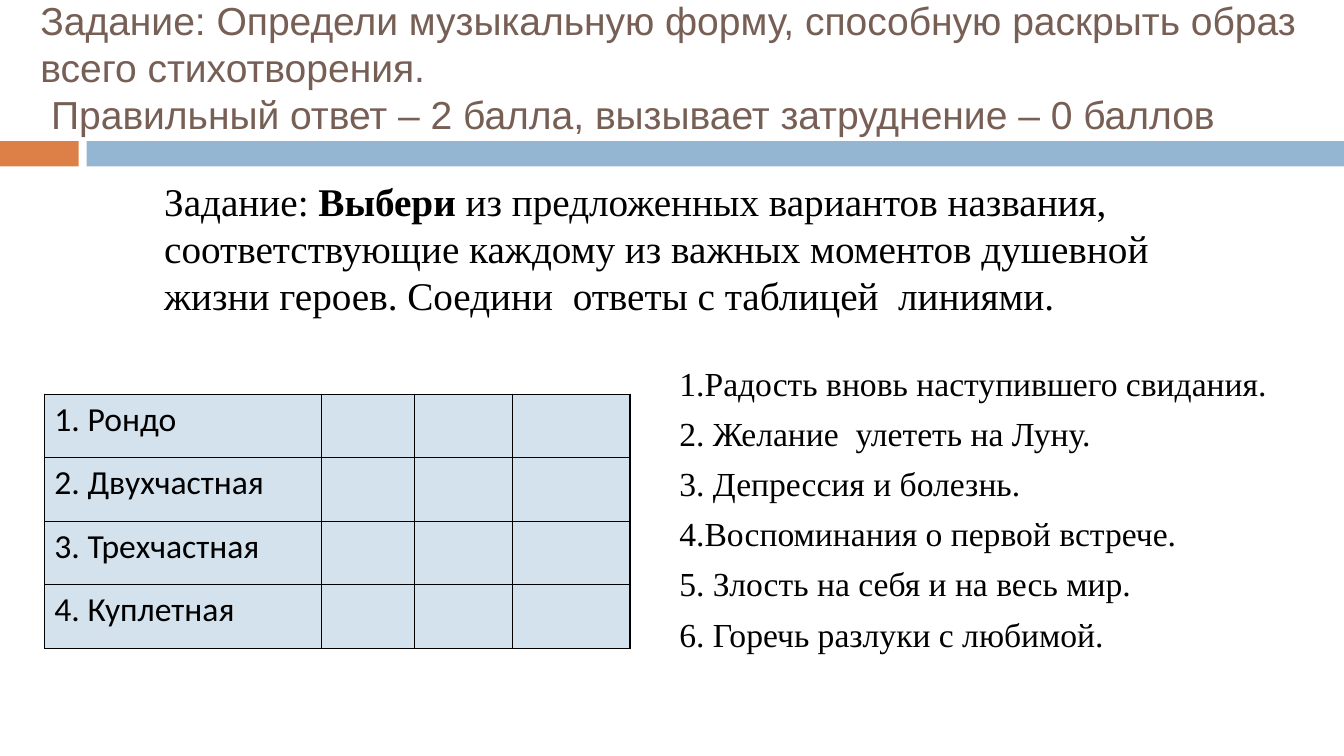
import pptx
import pptx.util
import pptx.dml.color
import pptx.enum.shapes
import pptx.enum.text
import pptx.oxml.ns
from lxml import etree

Inches, Pt = pptx.util.Inches, pptx.util.Pt
RGBColor = pptx.dml.color.RGBColor

WIDTH, HEIGHT = 13.33, 7.5
ORANGE = RGBColor(0xDD, 0x80, 0x47)
BLUE = RGBColor(0x94, 0xB6, 0xD2)
PALE_BLUE = RGBColor(0xD4, 0xE2, 0xED)
BROWN = RGBColor(0x77, 0x5F, 0x55)
BLACK = RGBColor(0, 0, 0)
SERIF = "Times New Roman"

TITLE = ["Задание: Определи музыкальную форму, способную раскрыть образ всего стихотворения.",
         " Правильный ответ – 2 балла, вызывает затруднение – 0 баллов"]
TASK = [("Задание: ", False), ("Выбери ", True),
        ("из предложенных вариантов названия, соответствующие каждому из важных "
         "моментов душевной жизни героев. Соедини  ответы с таблицей  линиями.", False)]
FORMS = ["1. Рондо", "2. Двухчастная", "3. Трехчастная", "4. Куплетная"]
MOMENTS = ["1.Радость вновь наступившего свидания.", "2. Желание  улететь на Луну.",
           "3. Депрессия и болезнь.", "4.Воспоминания о первой встрече.",
           "5. Злость на себя и на весь мир.", "6. Горечь разлуки с любимой."]
COLUMNS = [2.75, 0.92, 0.97, 1.17]
ROW = 0.63


def box(left, top, width, height):
    return [Inches(v) for v in (left, top, width, height)]


def add_run(p, text, size, font, color=BLACK, bold=False):
    r = p.add_run()
    r.text = text
    r.font.size, r.font.name, r.font.bold = Pt(size), font, bold
    r.font.color.rgb = color


def add_bar(s, left, width, color):
    sp = s.shapes.add_shape(pptx.enum.shapes.MSO_SHAPE.RECTANGLE, *box(left, 1.4, width, 0.25))
    sp.shadow.inherit = False
    sp.fill.solid()
    sp.fill.fore_color.rgb = color
    sp.line.fill.background()


def set_title(s):
    sp = s.shapes.title
    sp.left, sp.top, sp.width, sp.height = box(0.3, 0, WIDTH - 0.3, 1.33)
    tf = sp.text_frame
    tf.word_wrap = True
    tf.auto_size = pptx.enum.text.MSO_AUTO_SIZE.NONE
    tf.vertical_anchor = pptx.enum.text.MSO_ANCHOR.MIDDLE
    p = tf.paragraphs[0]
    p.alignment = pptx.enum.text.PP_ALIGN.LEFT
    add_run(p, TITLE[0], 27.9, "Arial", BROWN)
    p.add_line_break()
    add_run(p, TITLE[1], 27.9, "Arial", BROWN)


def add_text(s, place, paragraphs, size, space=0, indent=0):
    """Add a text box; each paragraph is a list of (text, bold) runs."""
    tf = s.shapes.add_textbox(*box(*place)).text_frame
    tf.word_wrap = True
    for i, runs in enumerate(paragraphs):
        p = tf.add_paragraph() if i else tf.paragraphs[0]
        p.space_before = Pt(space)
        if indent:
            pPr = p._p.get_or_add_pPr()
            pPr.set("marL", str(Inches(indent)))
            pPr.set("indent", str(-Inches(indent)))
        for text, bold in runs:
            add_run(p, text, size, SERIF, bold=bold)


def set_borders(cell):
    tcPr = cell._tc.get_or_add_tcPr()
    qn = pptx.oxml.ns.qn
    for i, side in enumerate(("lnL", "lnR", "lnT", "lnB")):
        ln = etree.Element(qn("a:" + side), w=str(Pt(1)))
        fill = etree.SubElement(ln, qn("a:solidFill"))
        etree.SubElement(fill, qn("a:srgbClr"), val=str(BLACK))
        tcPr.insert(i, ln)


def add_forms_table(s):
    place = box(0.44, 3.91, sum(COLUMNS), ROW * len(FORMS))
    table = s.shapes.add_table(len(FORMS), len(COLUMNS), *place).table
    for column, width in zip(table.columns, COLUMNS):
        column.width = Inches(width)
    for row, form in zip(table.rows, FORMS):
        row.height = Inches(ROW)
        for cell in row.cells:
            cell.fill.solid()
            cell.fill.fore_color.rgb = PALE_BLUE
            set_borders(cell)
        add_run(row.cells[0].text_frame.paragraphs[0], form, 24, "Calibri")


def main():
    prs = pptx.Presentation()
    prs.slide_width, prs.slide_height = Inches(WIDTH), Inches(HEIGHT)
    s = prs.slides.add_slide(prs.slide_layouts[5])
    add_bar(s, 0, 0.78, ORANGE)
    add_bar(s, 0.86, WIDTH - 0.86, BLUE)
    set_title(s)
    add_forms_table(s)
    add_text(s, (6.64, 3.55, 6.47, 3.18), [[(m, False)] for m in MOMENTS], 24, 7, 0.35)
    add_text(s, (1.53, 1.71, 10.81, 1.99), [TASK], 28)
    prs.save("out.pptx")


if __name__ == "__main__":
    main()
